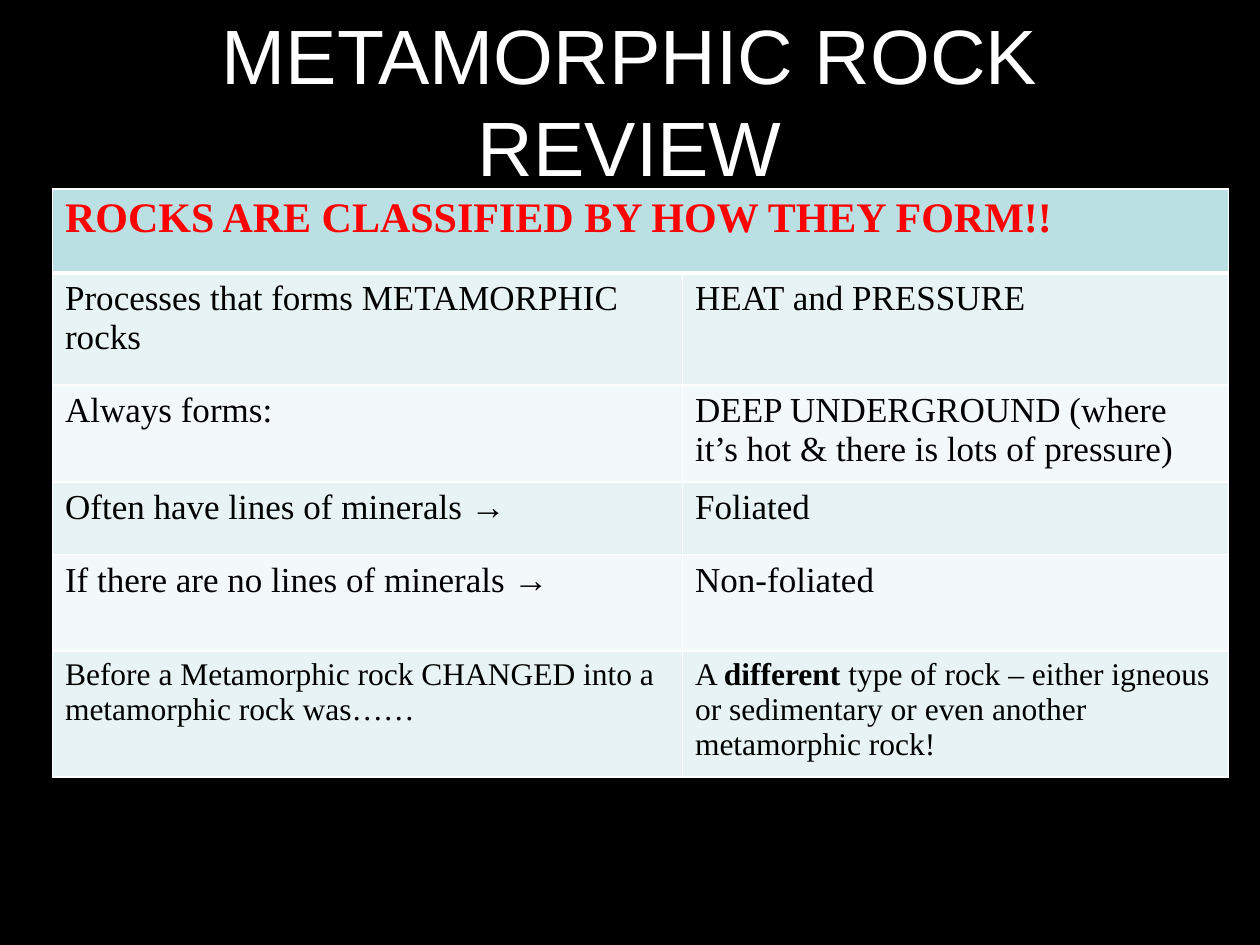
import pptx
import pptx.dml.color
import pptx.enum.text
import pptx.oxml
import pptx.oxml.ns
import pptx.util

Pt = pptx.util.Pt
HEADING = "ROCKS ARE CLASSIFIED BY HOW THEY FORM!!"
# Each row: height, text size, then the runs of the two cells; every second run is bold.
ROWS = [
    (64, 20, ["Processes that forms METAMORPHIC rocks"], ["HEAT and PRESSURE"]),
    (55.5, 20, ["Always forms:"],
     ["DEEP UNDERGROUND (where it’s hot & there is lots of pressure)"]),
    (41.5, 20, ["Often have lines of minerals →"], ["Foliated"]),
    (55, 20, ["If there are no lines of minerals →"], ["Non-foliated"]),
    (72, 18, ["Before a Metamorphic rock CHANGED into a metamorphic rock was……"],
     ["A ", "different ",
      "type of rock – either igneous or sedimentary or even another metamorphic rock!"]),
]
HEADING_HEIGHT = 48
COLUMN_WIDTHS = [360, 312]
BANDS = ["E7F3F4", "F3F9FA"]


def rgb(value):
    return pptx.dml.color.RGBColor.from_string(value)


def add_run(p, text, color, **font):
    r = p.add_run()
    r.text = text
    r.font.color.rgb = rgb(color)
    for name, value in font.items():
        setattr(r.font, name, value)


def set_borders(cell, **widths):
    """Draw white cell borders, 1 pt unless a side is given another width."""
    tcPr = cell._tc.get_or_add_tcPr()
    for i, side in enumerate("LRTB"):
        tcPr.insert(i, pptx.oxml.parse_xml(
            f'<a:ln{side} {pptx.oxml.ns.nsdecls("a")} w="{Pt(widths.get(side, 1))}">'
            '<a:solidFill><a:srgbClr val="FFFFFF"/></a:solidFill>'
            f'</a:ln{side}>'))


def fill_cell(cell, color):
    cell.fill.solid()
    cell.fill.fore_color.rgb = rgb(color)


def add_title(slide, text):
    sp = slide.shapes.title
    box = {"left": 36, "top": 12, "width": 648, "height": 90}
    for name, value in box.items():
        setattr(sp, name, Pt(value))
    tf = sp.text_frame
    tf.word_wrap = True
    tf.vertical_anchor = pptx.enum.text.MSO_ANCHOR.MIDDLE
    p = tf.paragraphs[0]
    p.alignment = pptx.enum.text.PP_ALIGN.CENTER
    add_run(p, text, "FFFFFF", size=Pt(44), name="Arial")


def add_review_table(slide):
    heights = [HEADING_HEIGHT] + [row[0] for row in ROWS]
    table = slide.shapes.add_table(
        len(heights), len(COLUMN_WIDTHS), Pt(30), Pt(108),
        Pt(sum(COLUMN_WIDTHS)), Pt(sum(heights))).table
    for column, width in zip(table.columns, COLUMN_WIDTHS):
        column.width = Pt(width)
    for row, height in zip(table.rows, heights):
        row.height = Pt(height)

    heading = table.cell(0, 0)
    heading.merge(table.cell(0, 1))
    add_run(heading.text_frame.paragraphs[0], HEADING, "FF0000",
            size=Pt(24), name="Times New Roman", bold=True)
    for cell in table.rows[0].cells:
        fill_cell(cell, "BBE0E3")
        set_borders(cell, B=3)

    for i, (_, size, *texts) in enumerate(ROWS):
        for cell, runs in zip(table.rows[i + 1].cells, texts):
            p = cell.text_frame.paragraphs[0]
            for j, text in enumerate(runs):
                add_run(p, text, "000000", size=Pt(size),
                        name="Times New Roman", bold=j % 2 == 1)
            fill_cell(cell, BANDS[i % 2])
            set_borders(cell, T=3 if i == 0 else 1)


def main():
    prs = pptx.Presentation()
    prs.slide_width, prs.slide_height = Pt(720), Pt(540)
    slide = prs.slides.add_slide(prs.slide_layouts[5])
    slide.background.fill.solid()
    slide.background.fill.fore_color.rgb = rgb("000000")
    add_title(slide, "METAMORPHIC ROCK REVIEW")
    add_review_table(slide)
    prs.save("out.pptx")


if __name__ == "__main__":
    main()
